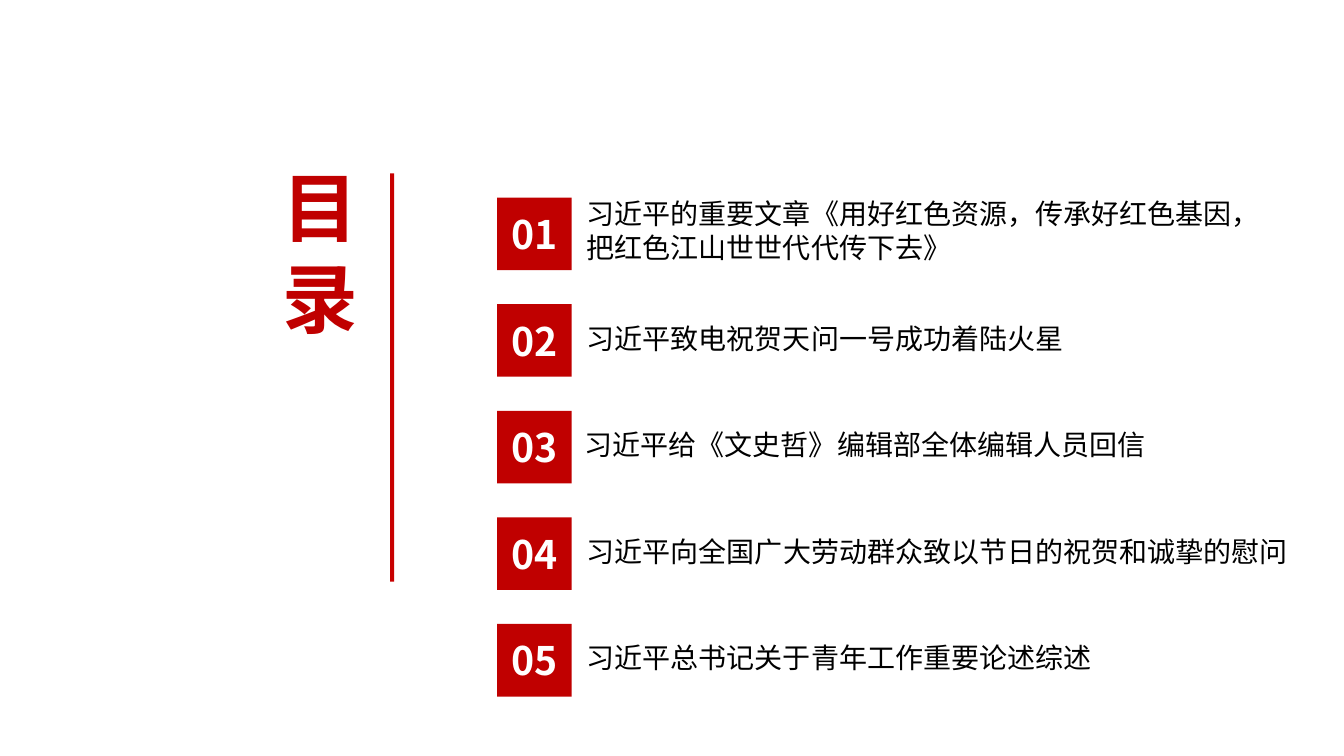
"""Builds a contents slide with a vertical title and five numbered entries."""
from lxml.etree import SubElement
from pptx import Presentation
from pptx.dml.color import RGBColor
from pptx.enum.shapes import MSO_SHAPE
from pptx.enum.text import MSO_ANCHOR, MSO_AUTO_SIZE, PP_ALIGN
from pptx.oxml.ns import qn
from pptx.util import Inches, Pt

RED = RGBColor(0xC0, 0x00, 0x00)
RULE_RED = RGBColor(0xC8, 0x00, 0x00)
BLACK = RGBColor(0x00, 0x00, 0x00)
WHITE = RGBColor(0xFF, 0xFF, 0xFF)
FONT = "Noto Sans CJK SC"

FIRST_TOP, LAST_TOP = 1.96, 6.19
ENTRIES = [
    ("习近平的重要文章《用好红色资源，传承好红色基因，把红色江山世世代代传下去》", 5.72, -0.06, 7.04, 0.77),
    ("习近平致电祝贺天问一号成功着陆火星", 5.72, 0.12, 7.04, 0.44),
    ("习近平给《文史哲》编辑部全体编辑人员回信", 5.7, 0.12, 6.93, 0.44),
    ("习近平向全国广大劳动群众致以节日的祝贺和诚挚的慰问", 5.72, 0.12, 7.25, 0.44),
    ("习近平总书记关于青年工作重要论述综述", 5.72, 0.12, 7.04, 0.44),
]


def write(tf, text, size, color, bold=False, align=PP_ALIGN.LEFT, anchor=MSO_ANCHOR.TOP):
    tf.word_wrap = True
    tf.auto_size = MSO_AUTO_SIZE.NONE
    tf.vertical_anchor = anchor
    p = tf.paragraphs[0]
    p.text = text
    p.alignment = align
    p.font.name = FONT
    p.font.size = Pt(size)
    p.font.bold = bold
    p.font.color.rgb = color
    SubElement(p._p.pPr.find(qn("a:defRPr")), qn("a:ea")).set("typeface", FONT)


def add_block(shapes, left, top, width, height, color):
    sp = shapes.add_shape(MSO_SHAPE.RECTANGLE, Inches(left), Inches(top), Inches(width), Inches(height))
    sp.shadow.inherit = False
    sp.fill.solid()
    sp.fill.fore_color.rgb = color
    sp.line.fill.background()
    return sp


def add_title(slide, text):
    title = slide.shapes.title
    title.left, title.top = Inches(2.73), Inches(1.56)
    title.width, title.height = Inches(1.2), Inches(1.89)
    tf = title.text_frame
    tf.margin_left = tf.margin_right = Inches(0.07)
    tf.margin_top = tf.margin_bottom = Inches(0.04)
    write(tf, text, 54, RED, bold=True)


def add_entry(slide, number, top, text, left, offset, width, height):
    shapes = slide.shapes.add_group_shape().shapes
    box = shapes.add_textbox(Inches(left), Inches(top + offset), Inches(width), Inches(height))
    write(box.text_frame, text, 20, BLACK)
    block = add_block(shapes, 4.93, top, 0.74, 0.72, RED)
    write(block.text_frame, f"{number:02d}", 28, WHITE, True, PP_ALIGN.CENTER, MSO_ANCHOR.MIDDLE)


def main():
    prs = Presentation()
    prs.slide_width, prs.slide_height = Inches(13.33), Inches(7.5)
    slide = prs.slides.add_slide(prs.slide_layouts[5])
    add_title(slide, "目录")
    add_block(slide.shapes, 3.87, 1.72, 0.04, 4.05, RULE_RED)
    pitch = (LAST_TOP - FIRST_TOP) / (len(ENTRIES) - 1)
    for i, entry in enumerate(ENTRIES):
        add_entry(slide, i + 1, FIRST_TOP + i * pitch, *entry)
    prs.save("out.pptx")


if __name__ == "__main__":
    main()
